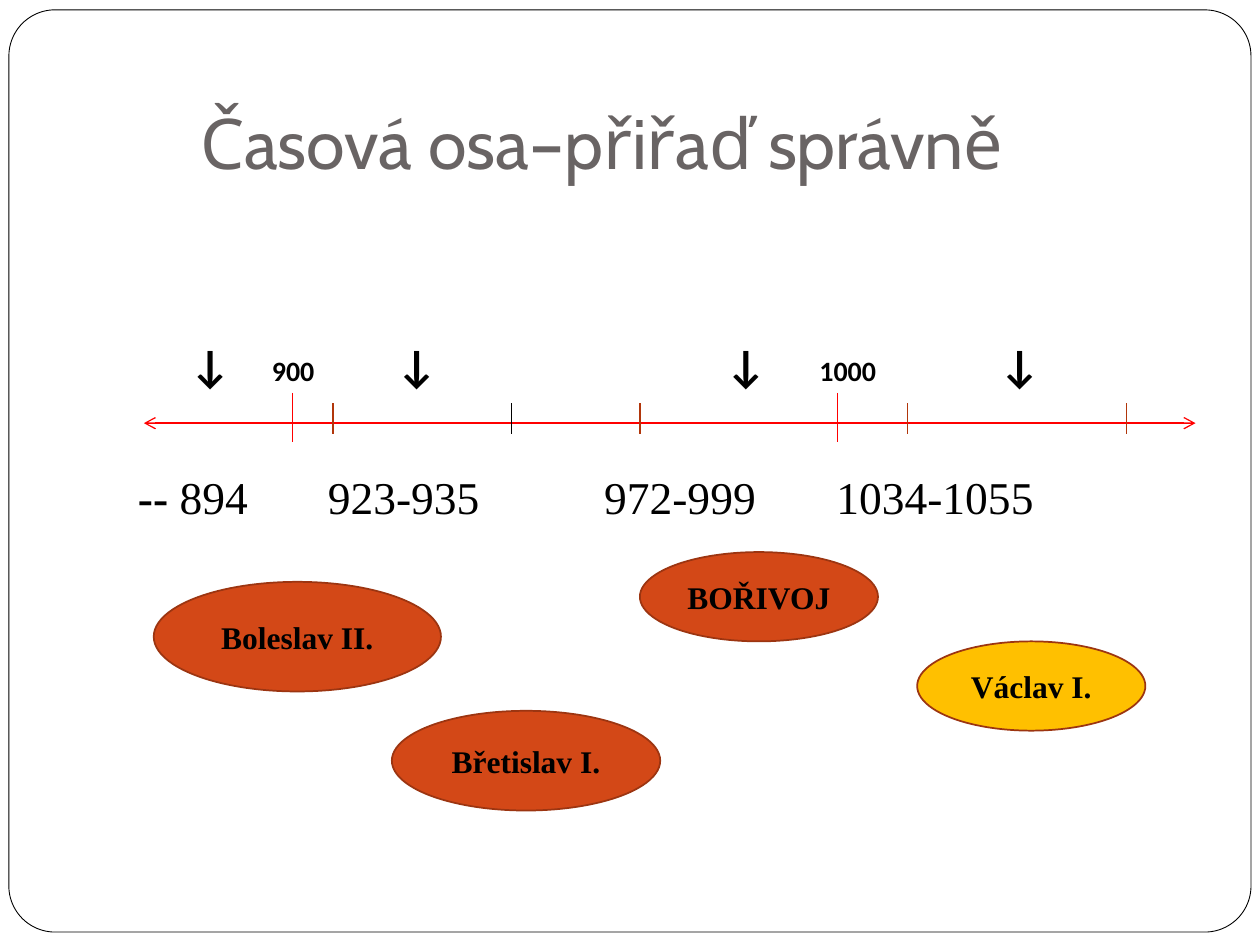
from dataclasses import dataclass

from lxml import etree
from pptx import Presentation
from pptx.dml.color import RGBColor
from pptx.enum.shapes import MSO_CONNECTOR, MSO_SHAPE
from pptx.enum.text import MSO_ANCHOR, PP_ALIGN
from pptx.oxml.ns import qn
from pptx.util import Cm, Pt

STRAIGHT = MSO_CONNECTOR.STRAIGHT
OVAL = MSO_SHAPE.OVAL
ROUNDED = MSO_SHAPE.ROUNDED_RECTANGLE
MIDDLE, BOTTOM = MSO_ANCHOR.MIDDLE, MSO_ANCHOR.BOTTOM
LEFT, CENTER = PP_ALIGN.LEFT, PP_ALIGN.CENTER


@dataclass(frozen=True)
class Theme:
    white: str = "FFFFFF"
    black: str = "000000"
    title: str = "696464"
    axis: str = "FF0000"
    tick: str = "B1360B"
    orange: str = "D34817"
    yellow: str = "FFC000"
    outline: str = "9C3511"
    title_font: str = "Cabin"
    label_font: str = "Calibri"
    serif_font: str = "Times New Roman"
    title_size: int = 40
    body_size: int = 26
    name_size: int = 18
    year_size: int = 16


THEME = Theme()
AXIS_Y = 8.53

# Horizontal centres in cm
ARROWS = (4.24, 8.4, 15.04, 20.56)
YEARS = (("900", 5.91), ("1000", 17.09))
DATES = (
    (("-- ", "894"), 3.89),
    (("", "923-935"), 8.14),
    (("", "972-999"), 13.71),
    (("", "1034-1055"), 18.85),
)
CENTURY_TICKS = (5.89, 16.89)
REIGN_TICKS = (
    (6.71, THEME.tick),
    (10.31, THEME.black),
    (12.9, THEME.tick),
    (18.29, THEME.tick),
    (22.71, THEME.tick),
)

# Name, left, top, width, height, fill
RULERS = (
    ("BOŘIVOJ", 12.9, 11.13, 4.8, 1.8, THEME.orange),
    ("Václav I.", 18.49, 12.93, 4.6, 1.8, THEME.yellow),
    ("Boleslav II.", 3.1, 11.73, 5.79, 2.21, THEME.orange),
    ("Břetislav I.", 7.9, 14.33, 5.41, 2.01, THEME.orange),
)


def style_span(span, font, size, color, bold=False):
    span.font.name = font
    span.font.size = Pt(size)
    span.font.bold = bold
    span.font.color.rgb = RGBColor.from_string(color)


def add_text(page, text, left, top, width, height, font, size, color,
             bold=False, align=CENTER, anchor=MIDDLE):
    box = page.shapes.add_textbox(Cm(left), Cm(top), Cm(width), Cm(height))
    frame = box.text_frame
    frame.word_wrap = True
    frame.vertical_anchor = anchor
    para = frame.paragraphs[0]
    para.text = text
    para.alignment = align
    style_span(para.runs[0], font, size, color, bold)
    return box


def add_label(page, text, center_x, center_y, font, size, bold=True):
    width, height = 5, 1.4
    return add_text(page, text, center_x - width / 2, center_y - height / 2,
                    width, height, font, size, THEME.black, bold)


def add_date(page, parts, center_x):
    prefix, years = parts
    font, size = THEME.serif_font, THEME.body_size
    box = add_label(page, prefix or years, center_x, 10, font, size, bool(prefix))
    if prefix:
        span = box.text_frame.paragraphs[0].add_run()
        span.text = years
        style_span(span, font, size, THEME.black)


def add_shape(page, kind, left, top, width, height, fill, line, weight):
    shape = page.shapes.add_shape(kind, Cm(left), Cm(top), Cm(width), Cm(height))
    shape.shadow.inherit = False
    shape.fill.solid()
    shape.fill.fore_color.rgb = RGBColor.from_string(fill)
    shape.line.color.rgb = RGBColor.from_string(line)
    shape.line.width = Pt(weight)
    return shape


def add_ruler(page, name, left, top, width, height, fill):
    oval = add_shape(page, OVAL, left, top, width, height, fill, THEME.outline, 1)
    frame = oval.text_frame
    frame.text = name
    frame.vertical_anchor = MIDDLE
    para = frame.paragraphs[0]
    para.alignment = CENTER
    style_span(para.runs[0], THEME.serif_font, THEME.name_size, THEME.black, True)


def add_line(page, x1, y1, x2, y2, color, arrows=False):
    line = page.shapes.add_connector(STRAIGHT, Cm(x1), Cm(y1), Cm(x2), Cm(y2))
    line.line.color.rgb = RGBColor.from_string(color)
    line.line.width = Pt(0.75)
    if arrows:
        outline = line.line._get_or_add_ln()
        for end in ("a:headEnd", "a:tailEnd"):
            etree.SubElement(outline, qn(end), type="arrow")
    etree.SubElement(line._element.spPr, qn("a:effectLst"))


def main():
    deck = Presentation()
    deck.slide_width, deck.slide_height = Cm(25.4), Cm(19.05)
    page = deck.slides.add_slide(deck.slide_layouts[6])

    # Frame and title
    frame = add_shape(page, ROUNDED, 0.18, 0.2, 25.04, 18.59,
                      THEME.white, THEME.black, 0.5)
    frame.adjustments[0] = 0.05
    title = add_text(page, "Časová osa–přiřaď správně", 2.54, 0.76, 21.59, 3.18,
                     THEME.title_font, THEME.title_size, THEME.title,
                     align=LEFT, anchor=BOTTOM)
    title.text_frame.margin_left = Cm(1.5)
    title.text_frame.margin_bottom = Cm(0.25)

    # Labels above and below the axis
    for x in ARROWS:
        add_label(page, "↓", x, 7.34, THEME.label_font, THEME.body_size)
    for year, x in YEARS:
        add_label(page, year, x, 7.46, THEME.label_font, THEME.year_size)
    for parts, x in DATES:
        add_date(page, parts, x)

    # Time axis and its ticks
    add_line(page, 2.9, AXIS_Y, 24.1, AXIS_Y, THEME.axis, arrows=True)
    for x in CENTURY_TICKS:
        add_line(page, x, 7.92, x, 8.92, THEME.axis)
    for x, color in REIGN_TICKS:
        add_line(page, x, 8.13, x, 8.74, color)

    # Rulers to match with the dates
    for ruler in RULERS:
        add_ruler(page, *ruler)

    deck.save("out.pptx")


if __name__ == "__main__":
    main()
